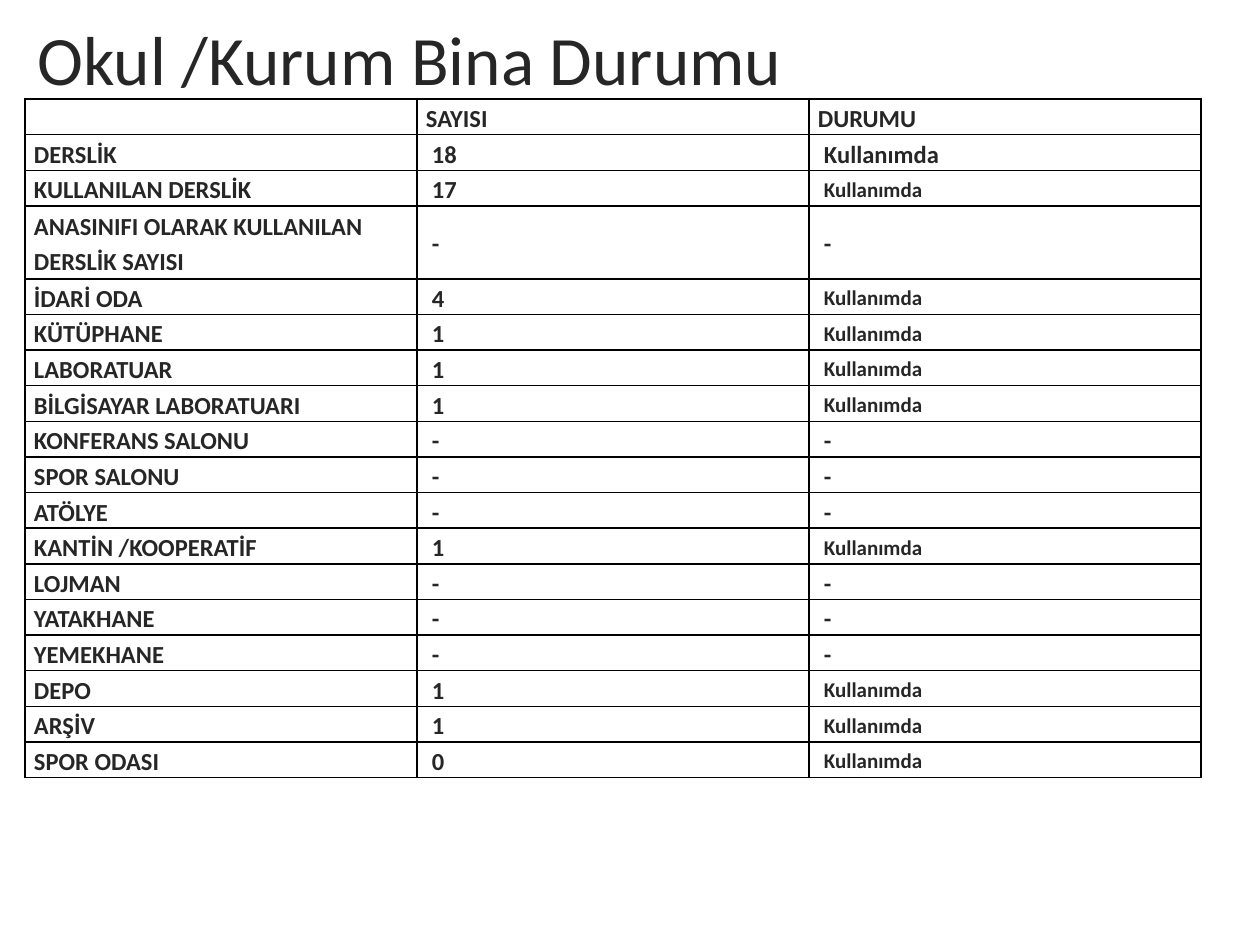
"""Build the school building status slide."""
from dataclasses import dataclass

from lxml.etree import SubElement as Sub
from pptx import Presentation
from pptx.dml.color import RGBColor as RGB
from pptx.enum.text import MSO_ANCHOR as Anchor
from pptx.oxml.ns import qn
from pptx.util import Emu, Pt

USED = "Kullanımda"
HEADERS = ("", "SAYISI", "DURUMU")
ROOMS = (
    ("DERSLİK", "18", USED),
    ("KULLANILAN DERSLİK", "17", USED),
    ("ANASINIFI OLARAK KULLANILAN DERSLİK SAYISI", "-", "-"),
    ("İDARİ ODA", "4", USED),
    ("KÜTÜPHANE", "1", USED),
    ("LABORATUAR", "1", USED),
    ("BİLGİSAYAR LABORATUARI", "1", USED),
    ("KONFERANS SALONU", "-", "-"),
    ("SPOR SALONU", "-", "-"),
    ("ATÖLYE", "-", "-"),
    ("KANTİN /KOOPERATİF", "1", USED),
    ("LOJMAN", "-", "-"),
    ("YATAKHANE", "-", "-"),
    ("YEMEKHANE", "-", "-"),
    ("DEPO", "1", USED),
    ("ARŞİV", "1", USED),
    ("SPOR ODASI", "0", USED),
)
TALL_ROW = 3


@dataclass(frozen=True)
class Theme:
    font: str = "Calibri"
    ink: str = "262626"
    border: str = "000000"
    title: float = 39.6
    body: int = 14
    small: int = 12
    spacing: float = 1.15


def px(n):
    return Emu(round(n * 914400 / 126))


class Deck:
    def __init__(self, prs, theme):
        self.theme = theme
        self.s = prs.slides.add_slide(prs.slide_layouts[6])

    def style(self, p, size, bold=False):
        for r in p.runs:
            f = r.font
            f.name, f.size, f.bold = self.theme.font, Pt(size), bold
            f.color.rgb = RGB.from_string(self.theme.ink)

    def title(self, text, x, y, w, h):
        tf = self.s.shapes.add_textbox(px(x), px(y), px(w), px(h)).text_frame
        tf.word_wrap = True
        tf.vertical_anchor = Anchor.MIDDLE
        tf.text = text
        self.style(tf.paragraphs[0], self.theme.title)

    def borders(self, cell):
        tc_pr = cell._tc.get_or_add_tcPr()
        for side in "LRTB":
            ln = Sub(tc_pr, qn(f"a:ln{side}"), w=str(Pt(1)))
            fill = Sub(ln, qn("a:solidFill"))
            Sub(fill, qn("a:srgbClr"), val=self.theme.border)

    def cell(self, cell, text, size, indent):
        self.borders(cell)
        cell.fill.background()
        cell.vertical_anchor = Anchor.MIDDLE
        cell.margin_left, cell.margin_right = px(indent), px(9)
        cell.margin_top = cell.margin_bottom = 0
        p = cell.text_frame.paragraphs[0]
        p.text = text
        p.line_spacing = self.theme.spacing
        self.style(p, size, bold=True)
        if not text:
            Sub(p._p, qn("a:endParaRPr"), sz=str(size * 100))

    def table(self, rows, x, y, w, h, tall):
        t = self.theme
        n_cols = len(rows[0])
        frame = self.s.shapes.add_table(len(rows), n_cols, px(x), px(y), px(w), px(h))
        tbl = frame.table
        tbl.first_row = tbl.horz_banding = False
        for col in tbl.columns:
            col.width = px(w / n_cols)
        for i, row in enumerate(rows):
            tbl.rows[i].height = px(tall if i == TALL_ROW else (h - tall) / (len(rows) - 1))
            for j, text in enumerate(row):
                size = t.small if text == USED and i > 1 else t.body
                self.cell(tbl.cell(i, j), text, size, 15 if i and j else 9)


def main():
    prs = Presentation()
    prs.slide_width, prs.slide_height = px(1260), px(945)
    deck = Deck(prs, Theme())
    deck.table((HEADERS, *ROOMS), 25, 99, 1176, 679, tall=73)
    deck.title("Okul /Kurum Bina Durumu", 25, 10, 1193, 95)
    prs.save("out.pptx")


if __name__ == "__main__":
    main()
